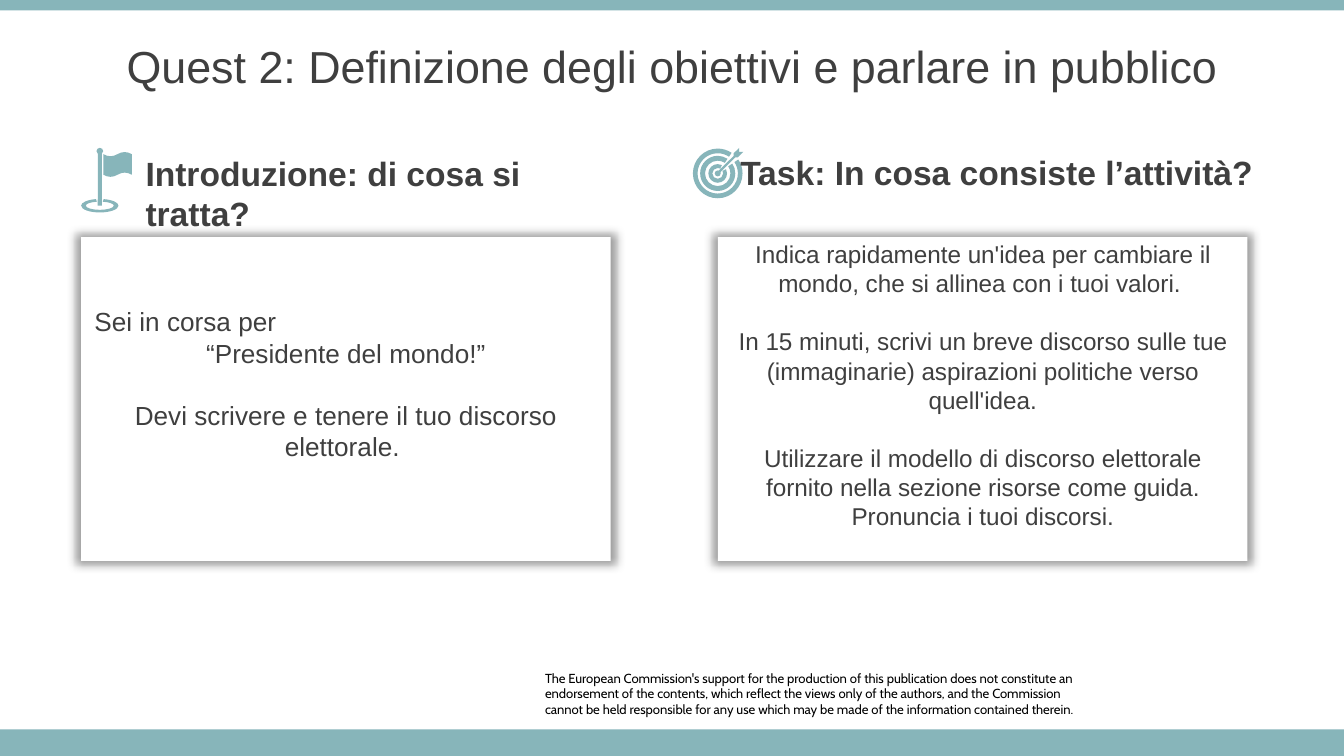
import math

from lxml import etree
from pptx import Presentation
from pptx.dml.color import RGBColor
from pptx.enum import shapes, text
from pptx.oxml import ns
from pptx.util import Pt

TEAL, GREY, WHITE, BLACK = "87B5BA", "3F3F3F", "FFFFFF", "000000"
LEFT, CENTER = text.PP_ALIGN.LEFT, text.PP_ALIGN.CENTER
MIDDLE, TOP = text.MSO_ANCHOR.MIDDLE, text.MSO_ANCHOR.TOP


def color(hex_value):
    return RGBColor.from_string(hex_value)


def paint(shape, fill):
    shape.shadow.inherit = False
    shape.fill.solid()
    shape.fill.fore_color.rgb = color(fill)
    shape.line.fill.background()


def write(shape, lines, size, font="Arial", ink=GREY, bold=False,
          anchor=MIDDLE, margins=(7.2, 3.6, 7.2, 3.6)):
    """Each line is (wording, alignment, space before)."""
    frame = shape.text_frame
    frame.word_wrap = True
    frame.vertical_anchor = anchor
    (frame.margin_left, frame.margin_top,
     frame.margin_right, frame.margin_bottom) = map(Pt, margins)
    for number, (wording, alignment, gap) in enumerate(lines):
        paragraph = frame.add_paragraph() if number else frame.paragraphs[0]
        paragraph.text = wording
        paragraph.alignment = alignment
        if gap:
            paragraph.space_before = Pt(gap)
        for run in paragraph.runs:
            run.font.name = font
            run.font.size = Pt(size)
            run.font.bold = bold
            run.font.color.rgb = color(ink)


def add_bar(slide, top, height):
    bar = slide.shapes.add_shape(
        shapes.MSO_SHAPE.RECTANGLE, 0, Pt(top), Pt(720), Pt(height))
    paint(bar, TEAL)


def add_label(slide, box, lines, size, **style):
    label = slide.shapes.add_textbox(*map(Pt, box))
    write(label, lines, size, **style)


def add_card(slide, left, lines, size):
    card = slide.shapes.add_shape(
        shapes.MSO_SHAPE.RECTANGLE, Pt(left), Pt(127), Pt(283.7), Pt(173.5))
    paint(card, WHITE)
    # Centred shadow, slightly larger than the card
    effects = card._element.spPr.find(ns.qn("a:effectLst"))
    shadow = etree.SubElement(
        effects, ns.qn("a:outerShdw"), blurRad=str(Pt(5)), sx="102000",
        sy="102000", algn="ctr", rotWithShape="0")
    tint = etree.SubElement(shadow, ns.qn("a:srgbClr"), val=BLACK)
    etree.SubElement(tint, ns.qn("a:alpha"), val="40000")
    # One free line stays below the text
    write(card, lines, size, margins=(7.2, 3.6, 7.2, 3.6 + 1.15 * size))


def arc(cx, cy, rx, ry, start, end):
    """First point, then Bezier steps cut at each quarter, anticlockwise."""
    low, high = sorted((start, end))
    cuts = [low] + [a for a in range(-360, 451, 90) if low < a < high] + [high]
    if start > end:
        cuts.reverse()

    def spot(angle, pull=0):
        c, s = math.cos(angle), math.sin(angle)
        return cx + rx * (c - pull * s), cy - ry * (s + pull * c)

    steps = [spot(math.radians(start))]
    for a, b in zip(cuts, cuts[1:]):
        a, b = math.radians(a), math.radians(b)
        pull = 4 / 3 * math.tan((b - a) / 4)
        steps.append(spot(a, pull) + spot(b, -pull) + spot(b))
    return steps


def open_ring(cx, cy, outer, inner, middle, half_gap):
    """A ring with a gap around the angle given as middle."""
    start, end = middle + half_gap, middle + 360 - half_gap
    return arc(cx, cy, *outer, start, end) + arc(cx, cy, *inner, end, start)


def add_icon(slide, outlines):
    """A step of two numbers is a line, one of six is a curve."""
    builder = None
    for outline in outlines:
        points = [(Pt(step[-2]), Pt(step[-1])) for step in outline]
        if builder is None:
            builder = slide.shapes.build_freeform(*points[0])
        else:
            builder.move_to(*points[0])
        builder.add_line_segments(points[1:], close=True)
    icon = builder.convert_to_shape()
    paint(icon, TEAL)
    # Turn the lines of curved steps into Bezier curves
    lines = list(icon._element.iter(ns.qn("a:lnTo")))
    steps = [step for outline in outlines for step in outline[1:]]
    for line, step in zip(lines, steps):
        if len(step) == 6:
            line.tag = ns.qn("a:cubicBezTo")
            for i, (x, y) in enumerate((step[:2], step[2:4])):
                line.insert(i, line.makeelement(ns.qn("a:pt"), {
                    "x": str(Pt(x) - icon.left), "y": str(Pt(y) - icon.top)}))


def flag_outlines():
    pole_x = 53.5
    base = open_ring(pole_x, 110.2, (10, 3.6), (7.5, 2.2), 90, 12)
    pole = arc(pole_x, 81, 1.8, 1.8, -55, 235) + [
        (pole_x - 1.1, 110.2), (pole_x + 1.1, 110.2)]
    cloth = [(55.4, 82.6), (57.9, 84.1, 60.5, 84.1, 63, 82.6),
             (65.5, 81.1, 68.1, 81.1, 70.6, 82.6),
             (70.6, 93.6), (68.1, 92.1, 65.5, 92.1, 63, 93.6),
             (60.5, 95.1, 57.9, 95.1, 55.4, 93.6)]
    return [base, cloth, pole]


def target_outlines():
    cx, cy = 384.5, 92.9
    rings = [open_ring(cx, cy, (outer, outer), (inner, inner), 45, half_gap)
             for outer, inner, half_gap in
             ((13.3, 10.8, 11), (9.4, 6.8, 11), (5, 2.9, 18))]
    # The dart mirrors itself along its shaft
    side = [(11.5, 13.7), (11.5, 11.5), (13.7, 11.5),
            (10.8, 8.6), (9.4, 8.6), (1.5, 0.7)]
    dart = [(cx + x, cy - y) for x, y in side]
    dart += arc(cx, cy, 1.6, 1.6, 20, -290)
    dart += [(cx + 8.6, cy - 9.4), (cx + 8.6, cy - 10.8)]
    return rings + [dart]


def main():
    deck = Presentation()
    deck.slide_width, deck.slide_height = Pt(720), Pt(405)
    slide = deck.slides.add_slide(deck.slide_layouts[6])

    # Frame of the page
    add_label(slide, (292, 359, 300.2, 25.2), [
        ("The European Commission's support for the production of this "
         "publication does not constitute an endorsement of the contents, "
         "which reflect the views only of the authors, and the Commission",
         LEFT, 0),
        ("cannot be held responsible for any use which may be made of the "
         "information contained therein.", LEFT, 0),
    ], 7, font="Cabin", ink=BLACK, anchor=TOP, margins=(0, 0, 0, 0))
    add_bar(slide, 390.8, 14.2)
    add_bar(slide, 0, 5.6)

    # Title
    add_label(slide, (0, 12.6, 720, 45.4), [
        ("Quest 2: Definizione degli obiettivi e parlare in pubblico",
         CENTER, 0)], 24)

    # Cards
    add_card(slide, 43.5, [
        ("Sei in corsa per", LEFT, 0),
        ("“Presidente del mondo!”", CENTER, 0),
        ("Devi scrivere e tenere il tuo discorso elettorale. ", CENTER, 16.5),
    ], 14)
    add_card(slide, 384.6, [
        ("Indica rapidamente un'idea per cambiare il mondo, che si allinea "
         "con i tuoi valori. ", CENTER, 0),
        ("In 15 minuti, scrivi un breve discorso sulle tue (immaginarie) "
         "aspirazioni politiche verso quell'idea.", CENTER, 15.6),
        ("Utilizzare il modello di discorso elettorale fornito nella sezione "
         "risorse come guida.\nPronuncia i tuoi discorsi.", CENTER, 15.6),
    ], 13)

    # Icons and headings
    add_icon(slide, flag_outlines())
    add_icon(slide, target_outlines())
    add_label(slide, (70.9, 92.2, 256.3, 22.3), [
        ("Introduzione: di cosa si tratta?", LEFT, 0)], 18, bold=True)
    add_label(slide, (389.5, 78.8, 297.4, 26.6), [
        ("Task: In cosa consiste l’attività?", LEFT, 0)], 18, bold=True)

    deck.save("out.pptx")


if __name__ == "__main__":
    main()
